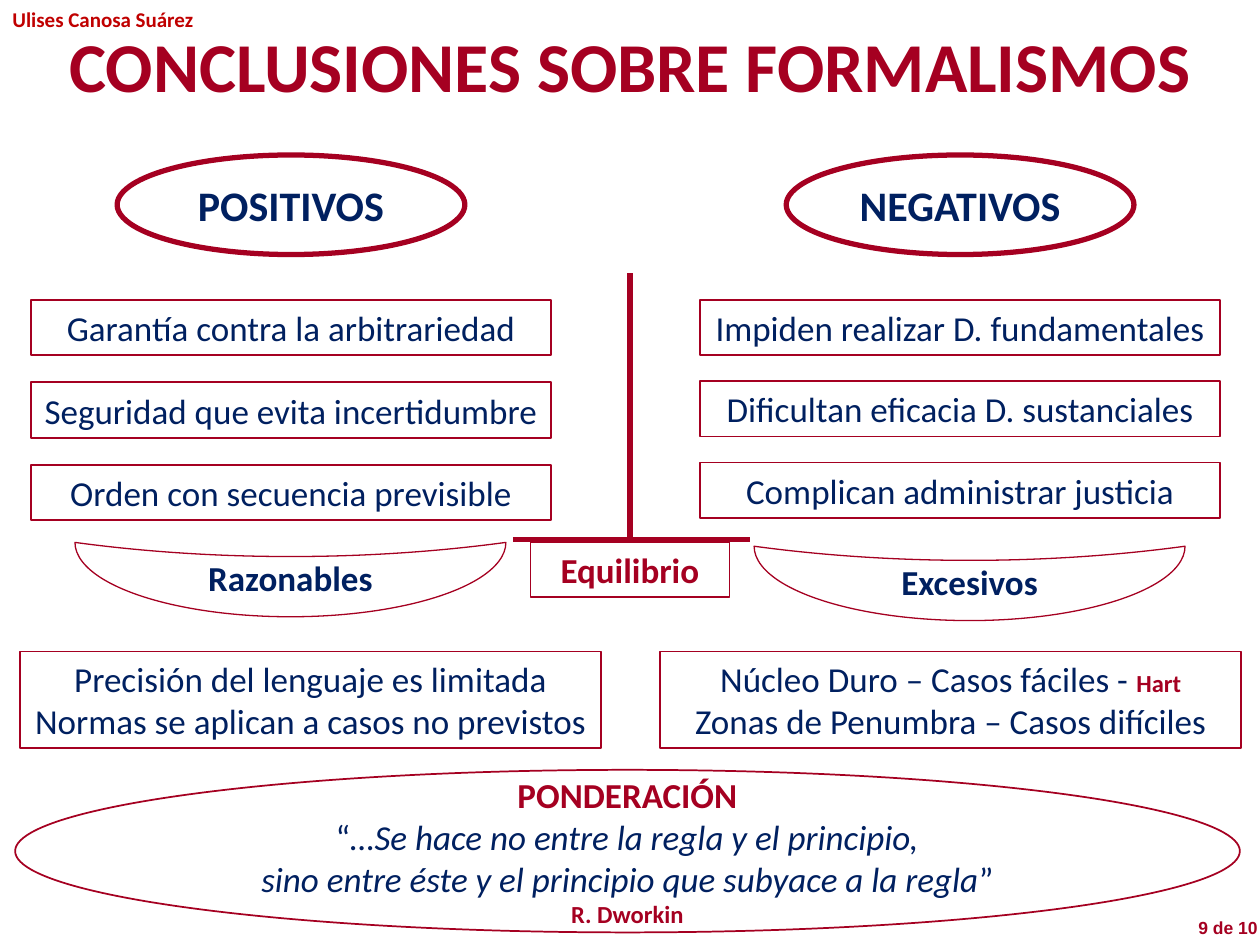
from dataclasses import dataclass
from typing import Optional

from lxml.etree import SubElement
from pptx import Presentation
from pptx.dml.color import RGBColor as Rgb
from pptx.enum.shapes import MSO_CONNECTOR as Link, MSO_SHAPE as Form
from pptx.enum.text import MSO_ANCHOR as Anchor, PP_ALIGN as Align
from pptx.oxml.ns import qn
from pptx.util import Inches, Pt


@dataclass(frozen=True)
class Theme:
    red: Rgb = Rgb(0xA5, 0x00, 0x21)
    navy: Rgb = Rgb(0x00, 0x20, 0x60)
    bright: Rgb = Rgb(0xC0, 0x00, 0x00)
    white: Rgb = Rgb(0xFF, 0xFF, 0xFF)
    font: str = "Calibri"
    plain: str = "Arial"
    title: int = 40
    head: int = 24
    body: int = 20
    small: int = 14
    note: int = 12
    page: int = 10
    thick: float = 3
    thin: float = 1
    fine: float = 0.75


T = Theme()
COLS, ROWS = 100, 75


@dataclass(frozen=True)
class Bit:
    text: str
    size: int = T.body
    color: Rgb = T.navy
    bold: bool = False
    slant: bool = False
    font: str = T.font


@dataclass(frozen=True)
class Area:
    left: float
    top: float
    width: float
    height: float


@dataclass(frozen=True)
class Shape:
    form: Form
    area: Area
    lines: list[list[Bit]]
    weight: float = T.thin
    fill: Optional[Rgb] = None
    wrap: bool = True


@dataclass(frozen=True)
class Side:
    mid: float
    head: str
    items: list[str]
    step: float
    moon: Area
    word: str
    base: Area
    notes: list[list[Bit]]


deck = Presentation()
deck.slide_width, deck.slide_height = Inches(10), Inches(7.5)
slide = deck.slides.add_slide(deck.slide_layouts[6])


def col(n: float) -> int:
    return round(deck.slide_width * n / COLS)


def row(n: float) -> int:
    return round(deck.slide_height * n / ROWS)


def place(area: Area) -> tuple[int, int, int, int]:
    return col(area.left), row(area.top), col(area.width), row(area.height)


def write(frame, lines: list[list[Bit]], align: Align, pad: float) -> None:
    frame.margin_left = frame.margin_right = Inches(pad)
    for i, bits in enumerate(lines):
        para = frame.paragraphs[0] if i == 0 else frame.add_paragraph()
        para.alignment = align
        for bit in bits:
            run = para.add_run()
            run.text = bit.text
            font = run.font
            font.name, font.size = bit.font, Pt(bit.size)
            font.bold, font.italic = bit.bold, bit.slant
            font.color.rgb = bit.color


def label(area: Area, bit: Bit, align: Align, pad: float = 0.1) -> None:
    frame = slide.shapes.add_textbox(*place(area)).text_frame
    frame.word_wrap = True
    write(frame, [[bit]], align, pad)


def draw(item: Shape):
    shape = slide.shapes.add_shape(item.form, *place(item.area))
    shape.shadow.inherit = False
    shape.line.color.rgb = T.red
    shape.line.width = Pt(item.weight)
    if item.fill is None:
        shape.fill.background()
    else:
        shape.fill.solid()
        shape.fill.fore_color.rgb = item.fill
    frame = shape.text_frame
    frame.word_wrap = item.wrap
    frame.vertical_anchor = Anchor.MIDDLE
    write(frame, item.lines, Align.CENTER, 0.05)
    return shape


def bar(x1: float, y1: float, x2: float, y2: float) -> None:
    line = slide.shapes.add_connector(
        Link.STRAIGHT, col(x1), row(y1), col(x2), row(y2))
    line.line.color.rgb = T.red
    line.line.width = Pt(T.thick)
    SubElement(line._element.spPr, qn("a:effectLst"))


def bowl(area: Area, word: str) -> None:
    shape = draw(Shape(Form.MOON, area, [[Bit(word, bold=True)]],
                       T.fine, T.white, False))
    shape.rotation = 270
    shape.adjustments[0] = 0.81
    shape.text_frame._txBody.bodyPr.set("vert", "vert")


def panel(side: Side) -> None:
    wide, tall = 41.3, 4.4
    for i, text in enumerate(side.items):
        area = Area(side.mid - wide / 2, 23.8 + i * side.step, wide, tall)
        draw(Shape(Form.RECTANGLE, area, [[Bit(text)]]))
    bowl(side.moon, side.word)
    draw(Shape(Form.OVAL, Area(side.mid - 13.8, 12.3, 27.6, 7.9),
               [[Bit(side.head, T.head, bold=True)]],
               T.thick, T.white, False))
    draw(Shape(Form.RECTANGLE, side.base, side.notes))


SIDES = [
    Side(23.1, "POSITIVOS",
         ["Garantía contra la arbitrariedad",
          "Seguridad que evita incertidumbre",
          "Orden con secuencia previsible"],
         6.55, Area(20.1, 28.9, 5.9, 34.2), "Razonables",
         Area(1.6, 51.7, 46.1, 7.7),
         [[Bit("Precisión del lenguaje es limitada")],
          [Bit("Normas se aplican a casos no previstos")]]),
    Side(76.2, "NEGATIVOS",
         ["Impiden realizar D. fundamentales",
          "Dificultan eficacia D. sustanciales",
          "Complican administrar justicia"],
         6.45, Area(74, 29.2, 5.9, 34.2), "Excesivos",
         Area(52.4, 51.7, 46.1, 7.7),
         [[Bit("Núcleo Duro – Casos fáciles - "),
           Bit("Hart", T.small, T.red, True)],
          [Bit("Zonas de Penumbra – Casos difíciles")]]),
]

QUOTE = [
    [Bit("PONDERACIÓN", color=T.red, bold=True)],
    [Bit("“"), Bit("…Se hace no entre la regla y el principio,", slant=True)],
    [Bit("sino entre éste y el principio que subyace a la regla", slant=True),
     Bit("”")],
    [Bit("R. Dworkin", T.small, T.red, True)],
]

label(Area(0, 0, 29.5, 3),
      Bit("Ulises Canosa Suárez", T.note, T.bright, True), Align.LEFT)
label(Area(0, 1.3, 100, 7.4),
      Bit("CONCLUSIONES SOBRE FORMALISMOS", T.title, T.red, True), Align.CENTER)
for side in SIDES:
    panel(side)
bar(50, 21.7, 50, 42.8)
bar(40.7, 42.8, 59.5, 42.8)
draw(Shape(Form.RECTANGLE, Area(42.1, 43, 15.8, 4.4),
           [[Bit("Equilibrio", color=T.red, bold=True)]]))
draw(Shape(Form.OVAL, Area(1.2, 61.1, 97.2, 12.9), QUOTE,
           T.thin, T.white, False))
label(Area(91, 72.3, 9, 2.7),
      Bit("9 de 10", T.page, T.red, True, font=T.plain), Align.RIGHT, 0.02)

deck.save("out.pptx")
